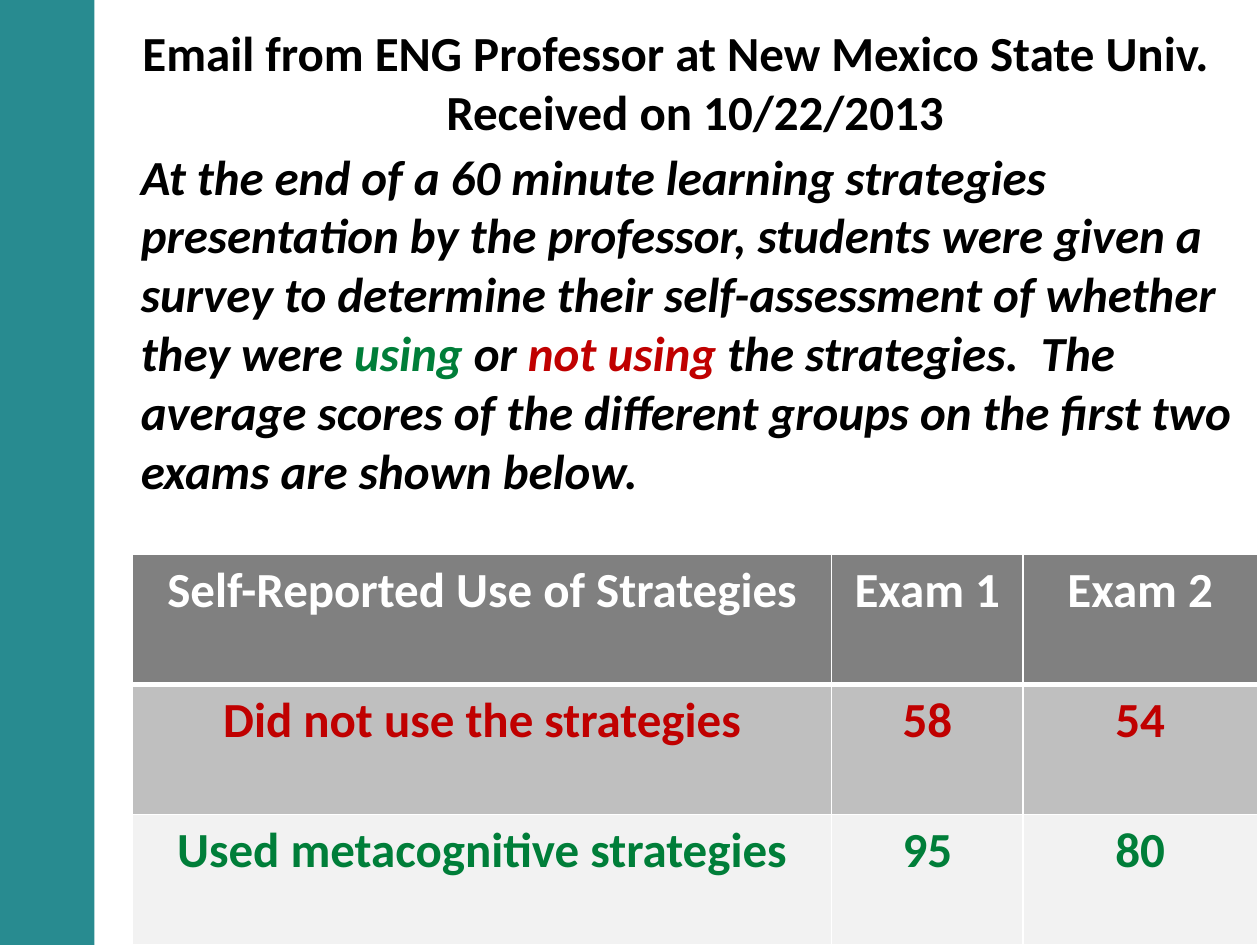
from lxml import etree
from pptx import Presentation
from pptx.dml.color import RGBColor
from pptx.enum.shapes import MSO_SHAPE
from pptx.enum.text import MSO_ANCHOR, MSO_AUTO_SIZE, PP_ALIGN
from pptx.oxml.ns import qn
from pptx.util import Pt

LEFT, CENTER = PP_ALIGN.LEFT, PP_ALIGN.CENTER
TOP = MSO_ANCHOR.TOP
NO_AUTOFIT = MSO_AUTO_SIZE.NONE
RECTANGLE = MSO_SHAPE.RECTANGLE

THEME = {
    "font": "Calibri",
    "size": 28,
    "text": "000000",
    "white": "FFFFFF",
    "used": "007E39",
    "not_used": "C00000",
    "bar": "288B90",
    "header_fill": "808080",
    "not_used_fill": "BFBFBF",
    "used_fill": "F2F2F2",
}


def add_run(paragraph, text, color, italic=False):
    run = paragraph.add_run()
    run.text = text
    font_format = {"name": THEME["font"], "size": Pt(THEME["size"]),
                   "bold": True, "italic": italic}
    for name, value in font_format.items():
        setattr(run.font, name, value)
    run.font.color.rgb = RGBColor.from_string(THEME[color])


def add_border(cell, side, width):
    properties = cell._tc.get_or_add_tcPr()
    line = etree.SubElement(properties, qn(f"a:ln{side}"), w=str(Pt(width)))
    fill = etree.SubElement(line, qn("a:solidFill"))
    etree.SubElement(fill, qn("a:srgbClr"), val=THEME["white"])


presentation = Presentation()
presentation.slide_width, presentation.slide_height = Pt(720), Pt(540)
slide = presentation.slides.add_slide(presentation.slide_layouts[5])

# Title and body frames
title = slide.shapes.title
title.left, title.top, title.width, title.height = Pt(74.2), Pt(9.4), Pt(645.8), Pt(74.9)
body = slide.shapes.add_textbox(Pt(73.4), Pt(79.9), Pt(648), Pt(399.6))
frame_format = {"word_wrap": True, "auto_size": NO_AUTOFIT, "vertical_anchor": TOP}
for shape in (title, body):
    for name, value in frame_format.items():
        setattr(shape.text_frame, name, value)

# Title: first line left, second line centred
first_line = title.text_frame.paragraphs[0]
first_line.alignment = LEFT
add_run(first_line, "Email from ENG Professor at New Mexico State Univ.", "text")
second_line = title.text_frame.add_paragraph()
second_line.alignment = CENTER
add_run(second_line, "Received on 10/22/2013", "text")

# Survey description
description = [
    ("At the end of a 60 minute learning strategies presentation by the "
     "professor, students were given a survey to determine their "
     "self-assessment of whether they were ", "text"),
    ("using", "used"),
    (" or ", "text"),
    ("not using ", "not_used"),
    ("the strategies.  The average scores of the different groups on the "
     "first two exams are shown below.", "text"),
]
for text, color in description:
    add_run(body.text_frame.paragraphs[0], text, color, italic=True)

# Exam score table
score_rows = [
    (("Self-Reported Use of Strategies", "Exam 1", "Exam 2"), "white", "header_fill"),
    (("Did not use the strategies", "58", "54"), "not_used", "not_used_fill"),
    (("Used metacognitive strategies", "95", "80"), "used", "used_fill"),
]
column_widths = (399.6, 109.4, 133.9)
row_height = 74.4
table = slide.shapes.add_table(
    len(score_rows), len(column_widths), Pt(75.6), Pt(316.8),
    Pt(sum(column_widths)), Pt(row_height * len(score_rows))).table
for column, width in zip(table.columns, column_widths):
    column.width = Pt(width)
for row_index, (texts, color, fill) in enumerate(score_rows):
    table.rows[row_index].height = Pt(row_height)
    # The rule under the header row is thicker
    border_widths = {"L": 1, "R": 1, "T": 3 if row_index == 1 else 1,
                     "B": 3 if row_index == 0 else 1}
    for column_index, text in enumerate(texts):
        cell = table.cell(row_index, column_index)
        for side, width in border_widths.items():
            add_border(cell, side, width)
        cell.fill.solid()
        cell.fill.fore_color.rgb = RGBColor.from_string(THEME[fill])
        paragraph = cell.text_frame.paragraphs[0]
        paragraph.alignment = CENTER
        add_run(paragraph, text, color)

# Side bar
bar = slide.shapes.add_shape(RECTANGLE, Pt(0), Pt(0), Pt(54), Pt(540))
bar.shadow.inherit = False
bar.fill.solid()
bar.fill.fore_color.rgb = RGBColor.from_string(THEME["bar"])
bar.line.fill.background()

presentation.save("out.pptx")
